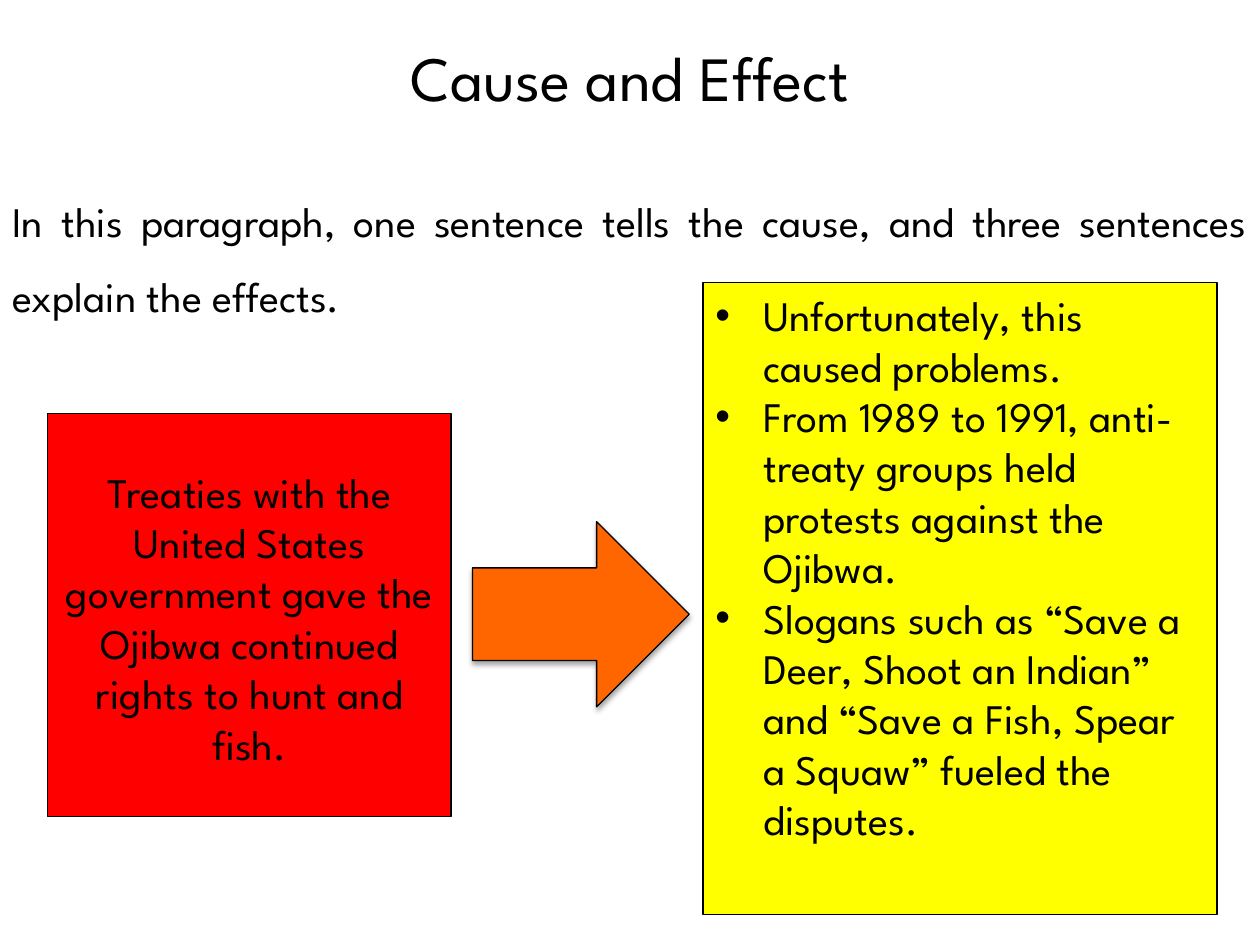
from lxml.etree import SubElement
from pptx import Presentation
from pptx.dml.color import RGBColor
from pptx.enum.shapes import MSO_SHAPE
from pptx.enum.text import MSO_AUTO_SIZE, PP_ALIGN
from pptx.oxml.ns import qn
from pptx.util import Inches, Pt

FONT = "League Spartan"
BLACK = "000000"
INDENT = Inches(0.38)


def color(value):
    """Turn a hex string into a colour."""
    return RGBColor.from_string(value)


def add_shape(shapes, kind, box, fill):
    """Add a filled shape with a thin black outline and no shadow."""
    sp = shapes.add_shape(kind, *map(Inches, box))
    sp.shadow.inherit = False
    sp.fill.solid()
    sp.fill.fore_color.rgb = color(fill)
    sp.line.color.rgb = color(BLACK)
    sp.line.width = Pt(0.75)
    return sp


def add_bullet(p):
    """Give a paragraph a round bullet with a hanging indent."""
    pPr = p._p.get_or_add_pPr()
    pPr.set("marL", str(INDENT))
    pPr.set("indent", str(-INDENT))
    SubElement(pPr, qn("a:buFont")).set("typeface", "Arial")
    SubElement(pPr, qn("a:buChar")).set("char", "•")


def add_text(shapes, box, texts, size=24, align=PP_ALIGN.LEFT, spacing=None, bullets=False):
    """Add a wrapped text box with one paragraph per text."""
    tf = shapes.add_textbox(*map(Inches, box)).text_frame
    tf.word_wrap = True
    tf.auto_size = MSO_AUTO_SIZE.SHAPE_TO_FIT_TEXT
    for i, text in enumerate(texts):
        p = tf.add_paragraph() if i else tf.paragraphs[0]
        p.alignment = align
        if spacing:
            p.line_spacing = spacing
        if bullets:
            add_bullet(p)
        r = p.add_run()
        r.text = text
        r.font.name = FONT
        r.font.size = Pt(size)
        r.font.color.rgb = color(BLACK)


def add_heading(s, box):
    """Add the title and, below it, the introduction."""
    left, top, width, height = box
    add_text(s.shapes, (left, top, width, 0.71), ["Cause and Effect"], 36, PP_ALIGN.CENTER)
    intro = "In this paragraph, one sentence tells the cause, and three sentences explain the effects."
    add_text(s.shapes, (left, top + height - 1.28, width, 1.28), [intro],
             align=PP_ALIGN.JUSTIFY, spacing=1.5)


def add_panel(s, box, fill, text_top, text_height, texts, **style):
    """Add a coloured panel grouped with its text."""
    left, top, width, height = box
    group = s.shapes.add_group_shape()
    add_shape(group.shapes, MSO_SHAPE.RECTANGLE, box, fill)
    add_text(group.shapes, (left, top + text_top, width, text_height), texts, **style)


def add_arrow(s, box):
    """Add the block arrow with a soft shadow underneath."""
    sp = add_shape(s.shapes, MSO_SHAPE.RIGHT_ARROW, box, "FF6600")
    effects = sp._element.spPr.find(qn("a:effectLst"))
    shadow = SubElement(effects, qn("a:outerShdw"), blurRad=str(Pt(3.1)),
                        dist=str(Pt(1.8)), dir="5400000", rotWithShape="0")
    shade = SubElement(shadow, qn("a:srgbClr"), val=BLACK)
    SubElement(shade, qn("a:alpha"), val="35000")


def main():
    """Build the cause and effect slide."""
    prs = Presentation()
    prs.slide_width, prs.slide_height = Inches(10), Inches(7.5)
    s = prs.slides.add_slide(prs.slide_layouts[6])
    add_heading(s, (0, 0.26, 10, 2.32))
    add_arrow(s, (3.75, 4.14, 1.72, 1.47))
    add_panel(s, (0.38, 3.28, 3.2, 3.2), "FF0000", 0.37, 2.52, [
        "Treaties with the United States government gave the Ojibwa continued rights to hunt and fish.",
    ], align=PP_ALIGN.CENTER)
    add_panel(s, (5.58, 2.24, 4.08, 5.02), "FFFF00", 0.01, 4.95, [
        "Unfortunately, this caused problems.",
        "From 1989 to 1991, anti-treaty groups held protests against the Ojibwa.",
        "Slogans such as “Save a Deer, Shoot an Indian” and “Save a Fish, Spear a Squaw” fueled the disputes.",
    ], bullets=True)
    prs.save("out.pptx")


if __name__ == "__main__":
    main()
